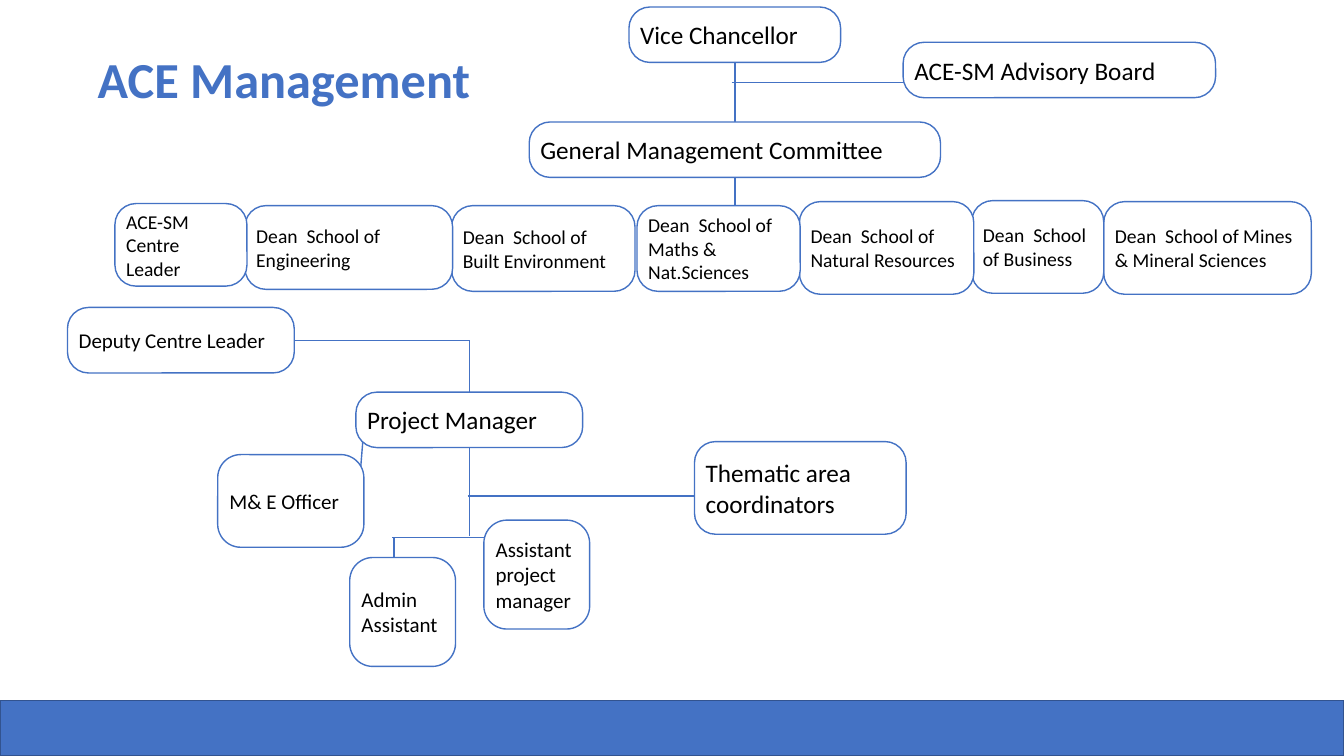
import pptx
import pptx.dml.color
import pptx.enum.shapes
import pptx.enum.text
import pptx.oxml.ns
import pptx.util
from lxml import etree

Pt = pptx.util.Pt
RGBColor = pptx.dml.color.RGBColor
Shape = pptx.enum.shapes.MSO_SHAPE

BLUE = RGBColor(0x44, 0x72, 0xC4)
DARK_BLUE = RGBColor(0x32, 0x53, 0x8F)
WHITE = RGBColor(0xFF, 0xFF, 0xFF)
BLACK = RGBColor(0, 0, 0)

PAGE_WIDTH, PAGE_HEIGHT = 960, 540
INSET = 3.6

# Connectors: start x, start y, end x, end y
LINKS = [
    (524.9, 40.3, 524.9, 151.9),   # vice chancellor to deans
    (522.7, 59, 685.4, 59),        # advisory board
    (100, 243.4, 335.5, 243.4),    # deputy centre leader
    (335.5, 243, 335.5, 310.3),    # down to project manager
    (335.5, 290.9, 335.5, 383),    # down to assistants
    (334.1, 354.2, 496.8, 354.2),  # thematic area coordinators
    (280.1, 383.8, 348.5, 383.8),  # assistant project manager
    (281.5, 383.8, 281.5, 426.2),  # admin assistant
    (255.6, 359.3, 259.2, 314.6),  # M&E officer
]

# Boxes by text size and corner radius: text, left, top, width, height
BOX_GROUPS = [
    (18, 15, [
        ("Vice Chancellor", 449.3, 5, 151.2, 39.6),
        ("General Management Committee", 378, 87.1, 293.8, 39.6),
        ("ACE-SM Advisory Board", 645.1, 30.2, 223.2, 39.6),
        ("Project Manager", 254.2, 280.1, 162, 39.6),
        ("Thematic area coordinators", 496.1, 315.4, 151.2, 66.2),
    ]),
    (14, 15, [
        ("Dean  School of Built Environment", 322.6, 146.9, 131, 61.2),
        ("Dean  School of Engineering", 175, 146.9, 148.3, 59.8),
        ("Dean  School of Mines & Mineral Sciences", 788.4, 144, 148.3, 66.2),
        ("Dean  School of Business", 694.1, 143.3, 94.3, 66.2),
        ("Dean  School of Natural Resources", 571, 144, 124.6, 66.2),
        ("Dean  School of Maths & Nat.Sciences", 455, 146.9, 116.6, 61.2),
        ("ACE-SM Centre Leader", 82.1, 145.4, 94.3, 59),
    ]),
    (15, 16.5, [
        ("Assistant project manager", 345.6, 371.5, 75.6, 77.8),
        ("Admin Assistant", 249.8, 398.2, 75.6, 77.8),
        ("M& E Officer", 155.5, 324.7, 104.4, 66.2),
    ]),
    (15, 15, [("Deputy Centre Leader", 48.2, 219.6, 162, 46.8)]),
]


def write_text(shape, text, size, color, bold=False):
    frame = shape.text_frame
    frame.word_wrap = True
    frame.auto_size = pptx.enum.text.MSO_AUTO_SIZE.NONE
    frame.vertical_anchor = pptx.enum.text.MSO_ANCHOR.MIDDLE
    frame.margin_left = frame.margin_right = Pt(INSET)
    frame.margin_top = frame.margin_bottom = Pt(INSET)
    frame.text = text
    para = frame.paragraphs[0]
    para.alignment = pptx.enum.text.PP_ALIGN.LEFT
    para.font.name = "Calibri"
    para.font.size = Pt(size)
    para.font.bold = bold
    para.font.color.rgb = color
    return para


def add_panel(page, kind, place, fill, line):
    panel = page.shapes.add_shape(kind, *map(Pt, place))
    panel.shadow.inherit = False
    panel.fill.solid()
    panel.fill.fore_color.rgb = fill
    panel.line.color.rgb = line
    panel.line.width = Pt(1)
    return panel


def add_box(page, text, place, size, radius):
    box = add_panel(page, Shape.ROUNDED_RECTANGLE, place, WHITE, BLUE)
    box.adjustments[0] = radius / min(place[2:])
    write_text(box, text, size, BLACK)


def add_link(page, ends):
    link = page.shapes.add_connector(
        pptx.enum.shapes.MSO_CONNECTOR.STRAIGHT, *map(Pt, ends))
    link.line.color.rgb = BLUE
    link.line.width = Pt(1)
    properties = link._element.spPr
    etree.SubElement(properties, pptx.oxml.ns.qn("a:effectLst"))


def set_title(page, text):
    title = page.shapes.title
    title.left, title.top = Pt(66.2), Pt(28.8)
    title.width, title.height = Pt(828), Pt(60.5)
    para = write_text(title, text, 36, BLUE, bold=True)
    para.line_spacing = 0.9


def main():
    deck = pptx.Presentation()
    deck.slide_width, deck.slide_height = Pt(PAGE_WIDTH), Pt(PAGE_HEIGHT)
    page = deck.slides.add_slide(deck.slide_layouts.get_by_name("Title Only"))

    # Title and footer band
    set_title(page, "ACE Management")
    add_panel(page, Shape.RECTANGLE, (0, 500.4, PAGE_WIDTH, 39.6),
              BLUE, DARK_BLUE)

    # Organisation chart, lines behind boxes
    for ends in LINKS:
        add_link(page, ends)
    for size, radius, boxes in BOX_GROUPS:
        for text, *place in boxes:
            add_box(page, text, place, size, radius)

    deck.save("out.pptx")


if __name__ == "__main__":
    main()
